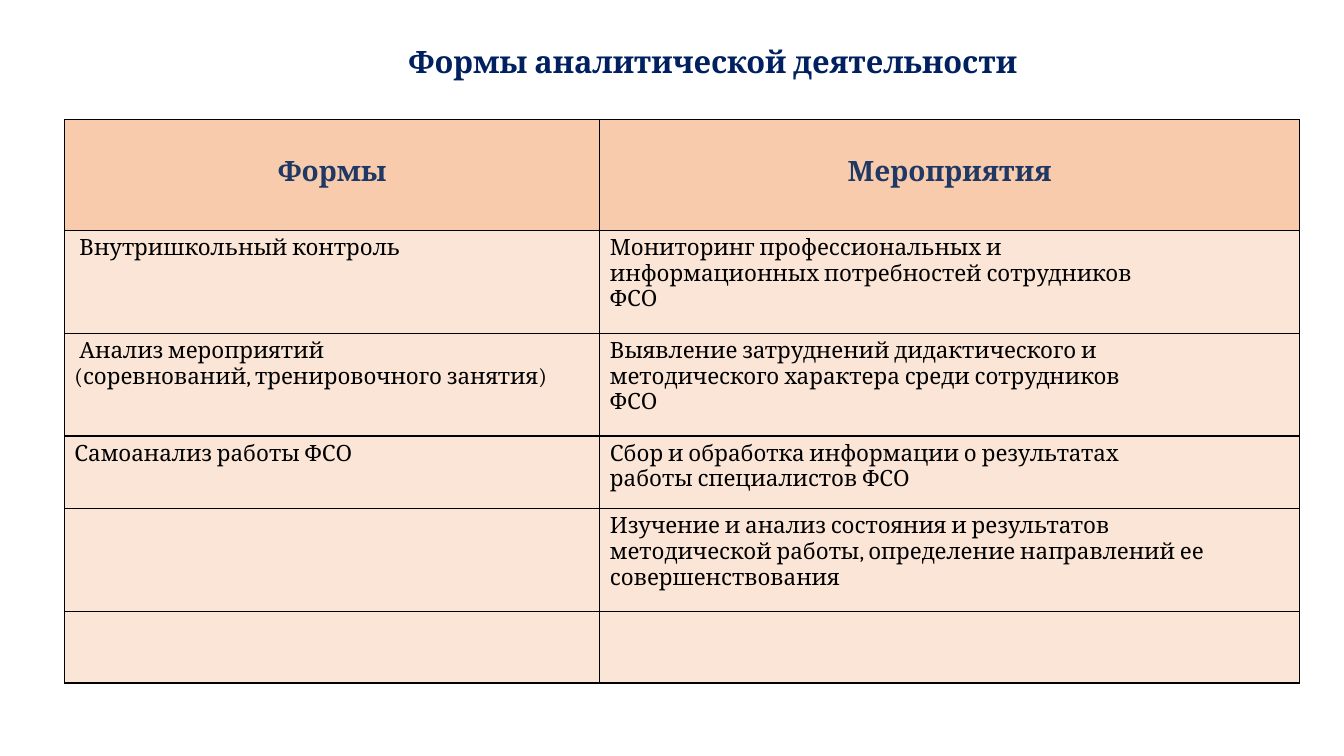
import dataclasses

import lxml.etree
import pptx
import pptx.dml.color
import pptx.enum.text
import pptx.oxml.ns
import pptx.util

Pt = pptx.util.Pt
RGB = pptx.dml.color.RGBColor.from_string
ALIGN = pptx.enum.text.PP_ALIGN
ANCHOR = pptx.enum.text.MSO_ANCHOR
qn = pptx.oxml.ns.qn


@dataclasses.dataclass(frozen=True)
class Theme:
    """Colours, font and type sizes of the slide."""
    font: str = "Cambria"
    title: str = "002060"
    heading: str = "203864"
    text: str = "000000"
    border: str = "000000"
    head_fill: str = "F8CBAD"
    body_fill: str = "FBE5D6"
    title_size: int = 22
    head_size: int = 20
    body_size: int = 16


THEME = Theme()
TITLE = "Формы аналитической деятельности"
HEADINGS = ("Формы", "Мероприятия")
ROWS = [
    (" Внутришкольный контроль",
     "Мониторинг профессиональных и \nинформационных потребностей сотрудников \nФСО"),
    (" Анализ мероприятий \n(соревнований, тренировочного занятия)",
     "Выявление затруднений дидактического и \nметодического характера среди сотрудников \nФСО"),
    ("Самоанализ работы ФСО",
     "Сбор и обработка информации о результатах \nработы специалистов ФСО"),
    ("", "Изучение и анализ состояния и результатов \n"
         "методической работы, определение направлений ее совершенствования"),
    ("", ""),
]
COL_WIDTHS = (382.5, 499.5)
ROW_HEIGHTS = (79, 73.5, 73.5, 52, 73.5, 51)


def add_text(p, text, size, color, bold=False):
    """Write text into a paragraph, one run per line."""
    for i, line in enumerate(text.split("\n")):
        if i:
            p.add_line_break()
        r = p.add_run()
        r.text = line
        r.font.name = THEME.font
        r.font.size = Pt(size)
        r.font.bold = bold
        r.font.color.rgb = RGB(color)


def set_borders(cell):
    """Draw a thin line on all four sides of a cell."""
    tc_pr = cell._tc.get_or_add_tcPr()
    for side in ("lnL", "lnR", "lnT", "lnB"):
        ln = lxml.etree.SubElement(tc_pr, qn("a:" + side), w=str(Pt(1)))
        fill = lxml.etree.SubElement(ln, qn("a:solidFill"))
        lxml.etree.SubElement(fill, qn("a:srgbClr"), val=THEME.border)


def add_title(s, left, top, width, height):
    """Place the slide title in the given box."""
    sp = s.shapes.title
    sp.left, sp.top, sp.width, sp.height = map(Pt, (left, top, width, height))
    tf = sp.text_frame
    tf.word_wrap = True
    tf.auto_size = pptx.enum.text.MSO_AUTO_SIZE.NONE
    tf.vertical_anchor = ANCHOR.MIDDLE
    p = tf.paragraphs[0]
    p.alignment = ALIGN.LEFT
    p.line_spacing = 1.0
    add_text(p, TITLE, THEME.title_size, THEME.title, True)


def add_forms_table(s, left, top):
    """Place the table of forms and activities at the given corner."""
    rows = [HEADINGS, *ROWS]
    frame = s.shapes.add_table(len(rows), len(HEADINGS), Pt(left), Pt(top),
                               Pt(sum(COL_WIDTHS)), Pt(sum(ROW_HEIGHTS)))
    table = frame.table
    for col, width in zip(table.columns, COL_WIDTHS):
        col.width = Pt(width)
    for i, (texts, height) in enumerate(zip(rows, ROW_HEIGHTS)):
        table.rows[i].height = Pt(height)
        for cell, text in zip(table.rows[i].cells, texts):
            set_borders(cell)
            cell.fill.solid()
            cell.fill.fore_color.rgb = RGB(THEME.body_fill if i else THEME.head_fill)
            p = cell.text_frame.paragraphs[0]
            if i == 0:
                cell.margin_top = Pt(26.5)
                p.alignment = ALIGN.CENTER
                add_text(p, text, THEME.head_size, THEME.heading, True)
            elif text:
                add_text(p, text, THEME.body_size, THEME.text)


def main():
    """Build the slide and save it."""
    prs = pptx.Presentation()
    prs.slide_width, prs.slide_height = Pt(960), Pt(540)
    s = prs.slides.add_slide(prs.slide_layouts[5])
    add_title(s, 284.5, 27, 460, 34)
    add_forms_table(s, 46, 85.5)
    prs.save("out.pptx")


if __name__ == "__main__":
    main()
